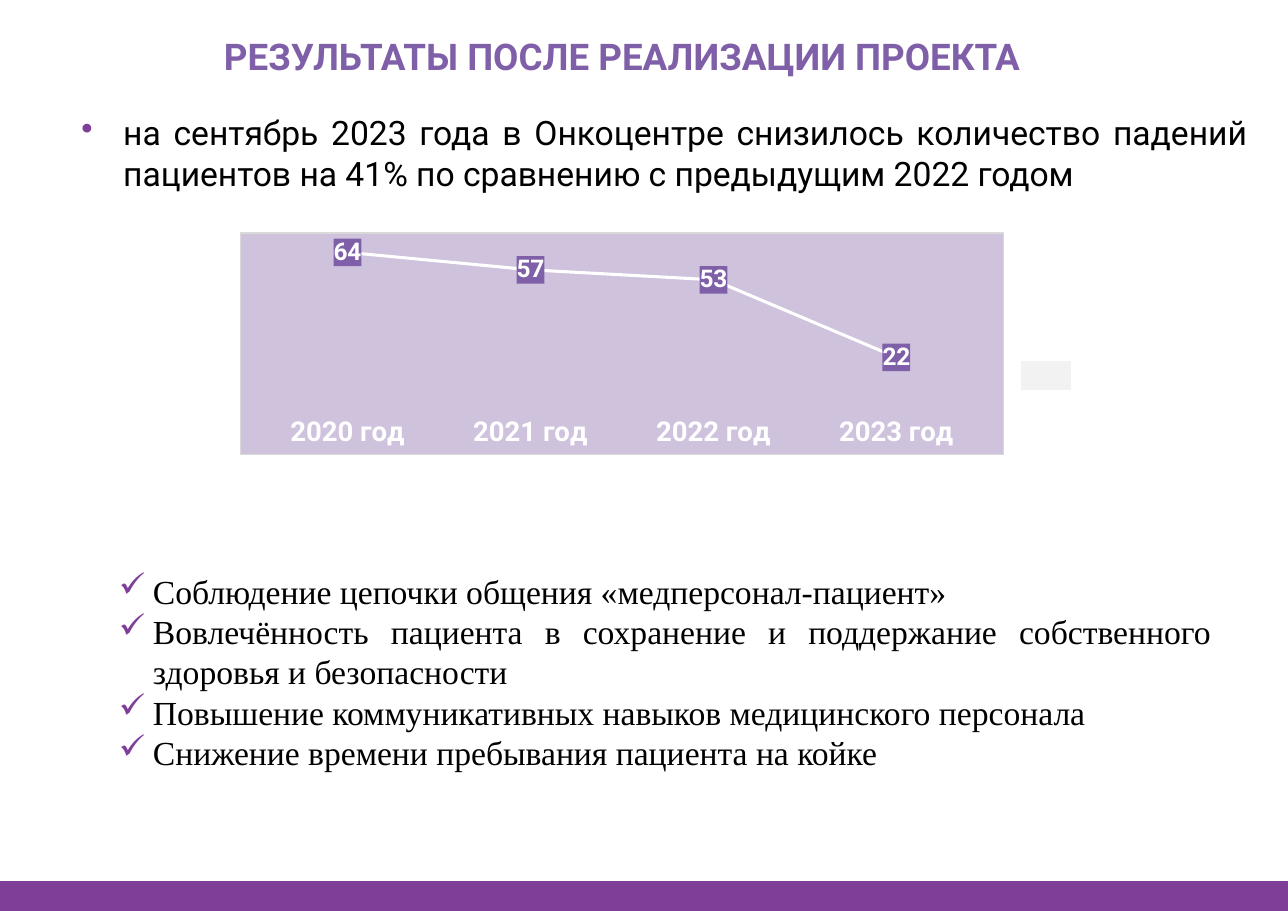
from lxml import etree
from pptx import Presentation
from pptx.chart import data
from pptx.dml.color import RGBColor
from pptx.enum import chart as kinds, shapes, text
from pptx.oxml import parse_xml
from pptx.oxml.ns import nsdecls, qn
from pptx.util import Inches, Pt

PURPLE = RGBColor(0x7F, 0x3F, 0x98)
VIOLET = RGBColor(0x7F, 0x5F, 0xA8)
WHITE = RGBColor(0xFF, 0xFF, 0xFF)
BLACK = RGBColor(0, 0, 0)
PALE = RGBColor(0xF2, 0xF2, 0xF2)
GREY = RGBColor(0xD9, 0xD9, 0xD9)

GOALS = [
    "Соблюдение цепочки общения «медперсонал-пациент»",
    "Вовлечённость пациента в сохранение и поддержание собственного здоровья и безопасности",
    "Повышение коммуникативных навыков медицинского персонала",
    "Снижение времени пребывания пациента на койке",
]
RESULT = ("на сентябрь 2023 года в Онкоцентре снизилось количество падений "
          "пациентов на 41% по сравнению с предыдущим 2022 годом")
FALLS = {"2020 год": 64, "2021 год": 57, "2022 год": 53, "2023 год": 22}


def style(font, name, size, color, bold=False):
    font.color.rgb = color
    for key, value in {"name": name, "size": Pt(size), "bold": bold}.items():
        setattr(font, key, value)


def block(slide, box, color, edge=None):
    rect = slide.shapes.add_shape(shapes.MSO_SHAPE.RECTANGLE, *map(Inches, box))
    rect.shadow.inherit = False
    rect.fill.solid()
    rect.fill.fore_color.rgb = color
    if edge is None:
        rect.line.fill.background()
    else:
        rect.line.color.rgb = edge
        rect.line.width = Pt(1)


def bullet(para, mark, indent):
    props = para._p.get_or_add_pPr()
    props.set("marL", str(Inches(indent)))
    props.set("indent", str(-Inches(indent)))
    tint = etree.SubElement(props, qn("a:buClr"))
    etree.SubElement(tint, qn("a:srgbClr"), val=str(PURPLE))
    etree.SubElement(props, qn("a:buChar"), char=mark)


def words(slide, box, lines, align, look, mark=None, indent=0):
    frame = slide.shapes.add_textbox(*map(Inches, box)).text_frame
    frame.word_wrap = True
    for i, line in enumerate(lines):
        para = frame.paragraphs[0] if i == 0 else frame.add_paragraph()
        para.alignment = align
        if mark:
            bullet(para, mark, indent)
        run = para.add_run()
        run.text = line
        style(run.font, *look)


def paint(color, alpha=100, edge=""):
    return parse_xml(
        f'<c:spPr {nsdecls("c", "a")}><a:solidFill><a:srgbClr val="{color}">'
        f'<a:alpha val="{alpha * 1000}"/></a:srgbClr></a:solidFill>{edge}</c:spPr>')


def graph(slide, box):
    falls = data.CategoryChartData()
    falls.categories = list(FALLS)
    falls.add_series("Series 1", list(FALLS.values()))
    chart = slide.shapes.add_chart(
        kinds.XL_CHART_TYPE.LINE, *map(Inches, box), falls).chart
    chart.has_legend = chart.has_title = False
    style(chart.font, "Calibri", 10, BLACK)

    # Axes
    years, count = chart.category_axis, chart.value_axis
    years.major_tick_mark = kinds.XL_TICK_MARK.NONE
    years.format.line.fill.background()
    style(years.tick_labels.font, "Roboto", 18, WHITE, True)
    for key, value in {"minimum_scale": 0, "maximum_scale": 70,
                       "has_major_gridlines": False, "visible": False}.items():
        setattr(count, key, value)

    # Line and its value labels
    plot = chart.plots[0]
    plot.vary_by_categories = False
    line = plot.series[0]
    line.smooth = False
    line.format.line.color.rgb = WHITE
    line.format.line.width = Pt(2)
    line.marker.style = kinds.XL_MARKER_STYLE.NONE
    labels = line.data_labels
    labels.show_value = True
    labels.position = kinds.XL_LABEL_POSITION.CENTER
    style(labels.font, "Roboto", 16, WHITE, True)
    labels._element.find(qn("c:txPr")).addprevious(paint(VIOLET))

    # Tinted background with a thin border
    edge = (f'<a:ln w="{Pt(0.75)}"><a:solidFill><a:srgbClr val="{GREY}"/>'
            '</a:solidFill></a:ln>')
    root = chart._chartSpace
    root.find(qn("c:txPr")).addprevious(paint(VIOLET, 38, edge))

    # Plot area placed as shares of the chart
    area = root.find(".//" + qn("c:plotArea"))
    for old in area.findall(qn("c:layout")):
        area.remove(old)
    place = etree.Element(qn("c:layout"))
    manual = etree.SubElement(place, qn("c:manualLayout"))
    for tag, value in {"layoutTarget": "inner", "xMode": "edge", "yMode": "edge",
                       "x": 0.02, "y": 0.02, "w": 0.96, "h": 0.79}.items():
        etree.SubElement(manual, qn("c:" + tag), val=str(value))
    area.insert(0, place)


def results(slide, box):
    left, top, width, height = box
    align = text.PP_ALIGN
    # Footer band and title
    block(slide, (left, top + height - 0.27, width, 0.27), PURPLE)
    words(slide, (left + 0.27, top + 0.26, 10.75, 0.43),
          ["РЕЗУЛЬТАТЫ ПОСЛЕ РЕАЛИЗАЦИИ ПРОЕКТА"], align.CENTER,
          ("Roboto", 24, VIOLET, True))
    # Pale block beside the chart
    block(slide, (left + 9.26, top + 3.27, 0.47, 0.28), PALE, WHITE)
    # Goals, chart and main result
    words(slide, (left + 0.98, top + 5.13, 10.11, 1.95), GOALS, align.JUSTIFY,
          ("Times New Roman", 22, BLACK), "✓", 0.31)
    graph(slide, (left + 2.18, top + 2.11, 6.93, 2.02))
    words(slide, (left + 0.64, top + 0.97, 10.78, 0.84), [RESULT], align.JUSTIFY,
          ("Roboto", 22, BLACK), "•", 0.38)


def main():
    deck = Presentation()
    size = 11.69, 8.27
    deck.slide_width, deck.slide_height = map(Inches, size)
    results(deck.slides.add_slide(deck.slide_layouts[6]), (0, 0, *size))
    deck.save("out.pptx")


if __name__ == "__main__":
    main()
